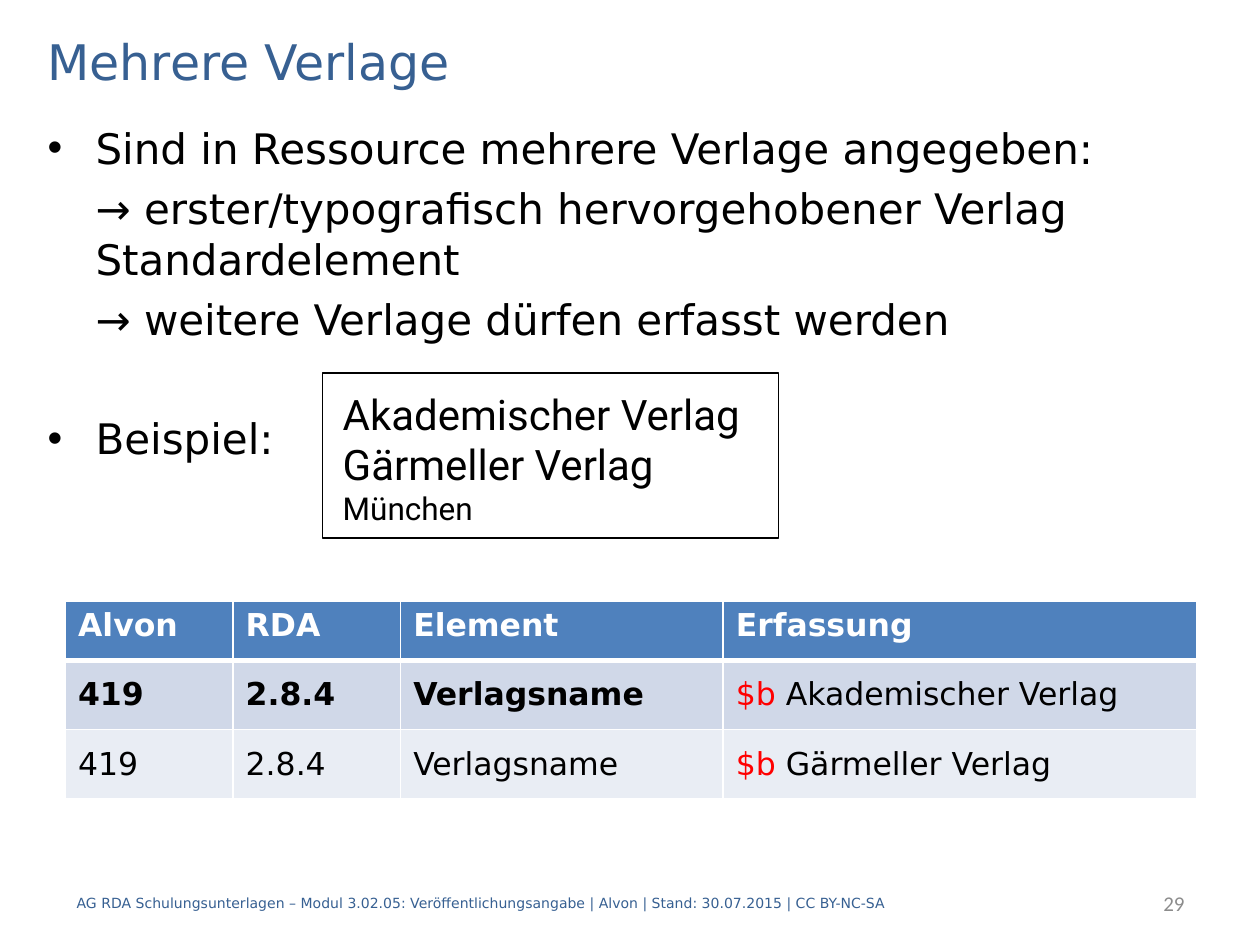
from lxml import etree
from pptx import Presentation
from pptx.dml.color import RGBColor
from pptx.enum.shapes import MSO_SHAPE
from pptx.enum.text import MSO_ANCHOR, PP_ALIGN
from pptx.oxml.ns import qn
from pptx.util import Inches, Pt

RECT = MSO_SHAPE.RECTANGLE
TOP, MIDDLE = MSO_ANCHOR.TOP, MSO_ANCHOR.MIDDLE
LEFT, RIGHT = PP_ALIGN.LEFT, PP_ALIGN.RIGHT
FONT = "DejaVu Sans"
COLORS = {
    "title": "376092", "text": "000000", "white": "FFFFFF", "code": "FF0000",
    "number": "8C8C8C", "header": "4F81BD", "band1": "D0D8E8", "band2": "E9EDF4",
}


def rgb(name):
    return RGBColor.from_string(COLORS[name])


def add_text(p, text, size=18, color="text", font=FONT, bold=False,
             align=LEFT, before=0, after=0):
    p.alignment = align
    p.space_before, p.space_after = Pt(before), Pt(after)
    r = p.add_run()
    r.text = text
    r.font.size, r.font.name, r.font.bold = Pt(size), font, bold
    r.font.color.rgb = rgb(color)


prs = Presentation()
prs.slide_width, prs.slide_height = Inches(10), Inches(7.5)
s = prs.slides.add_slide(prs.slide_layouts[6])

# Title, slide number and footer
lines = [
    (0.28, 0.2, 9.45, 0.56, "Mehrere Verlage", dict(size=28, color="title")),
    (7.91, 6.97, 1.59, 0.4, "29",
     dict(size=12, color="number", font="Calibri", align=RIGHT)),
    (0.51, 6.97, 8.27, 0.4,
     "AG RDA Schulungsunterlagen – Modul 3.02.05: Veröffentlichungsangabe"
     " | Alvon | Stand: 30.07.2015 | CC BY-NC-SA", dict(size=8, color="title")),
]
for x, y, w, h, text, fmt in lines:
    tf = s.shapes.add_textbox(Inches(x), Inches(y), Inches(w), Inches(h)).text_frame
    tf.word_wrap, tf.vertical_anchor = True, MIDDLE
    add_text(tf.paragraphs[0], text, **fmt)

# Body: text, bulleted or not, space before
body = [
    ("Sind in Ressource mehrere Verlage angegeben:", True, 5.75),
    ("→ erster/typografisch hervorgehobener Verlag Standardelement", False, 5.75),
    ("→ weitere Verlage dürfen erfasst werden", False, 5.75),
    ("Beispiel:", True, 39.5),
]
tf = s.shapes.add_textbox(Inches(0.28), Inches(0.92), Inches(9.45), Inches(5.98)).text_frame
tf.word_wrap = True
for i, (text, bulleted, before) in enumerate(body):
    p = tf.paragraphs[0] if i == 0 else tf.add_paragraph()
    add_text(p, text, size=24, before=before)
    pPr = p._p.get_or_add_pPr()
    pPr.set("marL", str(Inches(0.38)))
    pPr.set("indent", str(-Inches(0.38) if bulleted else 0))
    if bulleted:
        etree.SubElement(pPr, qn("a:buFont"), typeface="Arial")
        etree.SubElement(pPr, qn("a:buChar"), char="•")

# Example box
box = s.shapes.add_shape(RECT, Inches(2.56), Inches(2.96), Inches(3.62), Inches(1.31))
box.shadow.inherit = False
box.fill.solid()
box.fill.fore_color.rgb = rgb("white")
box.line.color.rgb = rgb("text")
box.line.width = Pt(0.75)
tf = box.text_frame
tf.word_wrap, tf.vertical_anchor = True, TOP
tf.margin_left = tf.margin_right = Inches(0.16)
tf.margin_top, tf.margin_bottom = Inches(0.12), Inches(0.08)
example = [("Akademischer Verlag", 24), ("Gärmeller Verlag", 24), ("München", 18)]
for i, (text, size) in enumerate(example):
    p = tf.paragraphs[0] if i == 0 else tf.add_paragraph()
    add_text(p, text, size=size, font="Roboto")

# Table
rows = [
    ["Alvon", "RDA", "Element", "Erfassung"],
    ["419", "2.8.4", "Verlagsname", "Akademischer Verlag"],
    ["419", "2.8.4", "Verlagsname", "Gärmeller Verlag"],
]
fills = ["header", "band1", "band2"]
table = s.shapes.add_table(3, 4, Inches(0.52), Inches(4.77), Inches(8.98), Inches(1.57)).table
for col, w in zip(table.columns, [1.33, 1.33, 2.56, 3.76]):
    col.width = Inches(w)
for row, h in zip(table.rows, [0.47, 0.55, 0.55]):
    row.height = Inches(h)
for i, row in enumerate(rows):
    for j, text in enumerate(row):
        cell = table.cell(i, j)
        p = cell.text_frame.paragraphs[0]
        if i == 0:
            add_text(p, text, color="white", bold=True)
        else:
            cell.vertical_anchor = MIDDLE
            if j == 3:
                add_text(p, "$b", color="code")
                text = " " + text
            add_text(p, text, bold=i == 1 and j < 3, before=6, after=6)

        # White borders, thicker below the header; they precede the fill in the XML
        tcPr = cell._tc.get_or_add_tcPr()
        for side in "LRTB":
            thick = (i, side) in ((0, "B"), (1, "T"))
            ln = etree.SubElement(tcPr, qn("a:ln" + side), w=str(Pt(3 if thick else 1)))
            fill = etree.SubElement(ln, qn("a:solidFill"))
            etree.SubElement(fill, qn("a:srgbClr"), val=COLORS["white"])
        cell.fill.solid()
        cell.fill.fore_color.rgb = rgb(fills[i])

prs.save("out.pptx")
